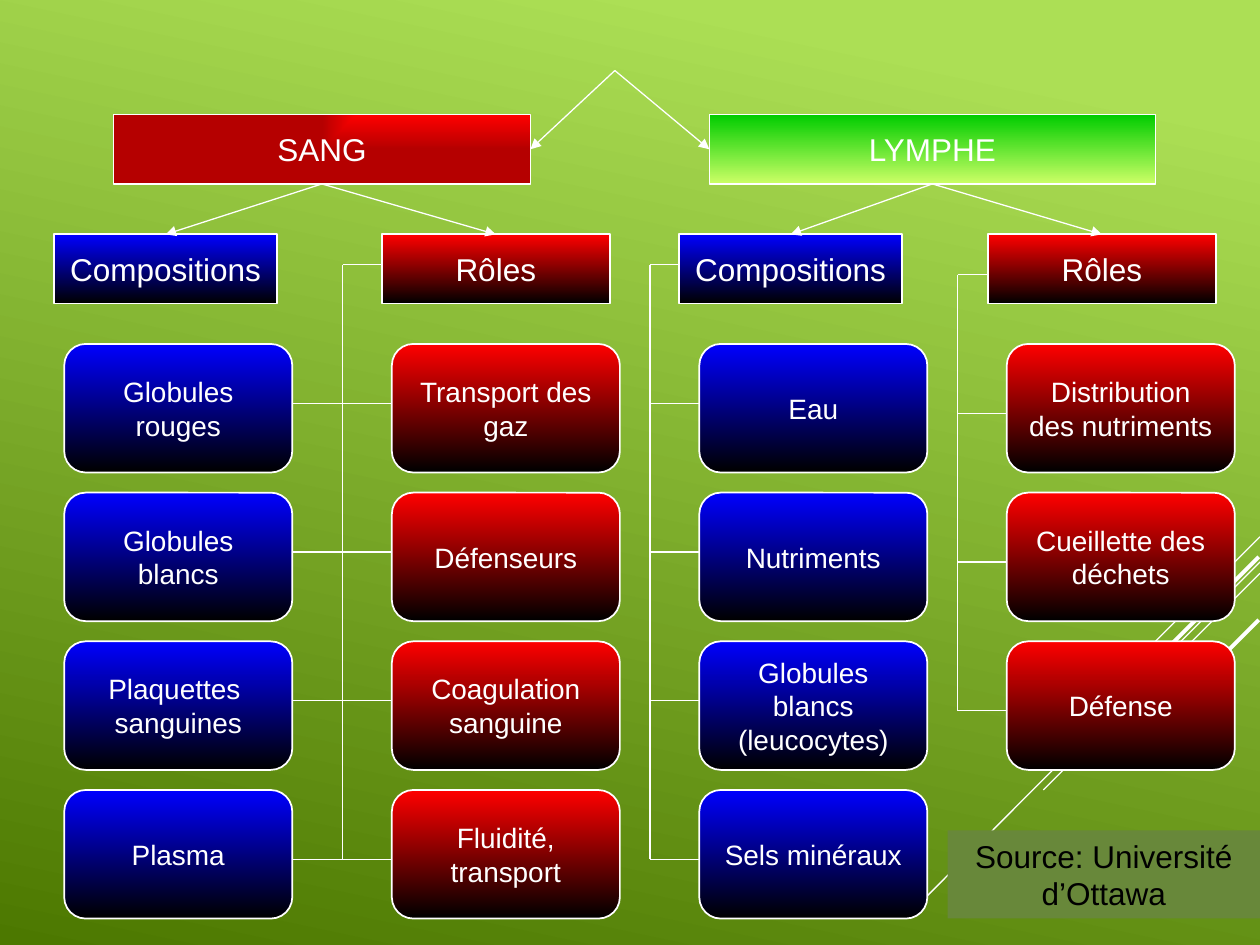
from dataclasses import dataclass

import pptx
import pptx.dml.color
import pptx.enum.shapes
import pptx.enum.text
import pptx.oxml
import pptx.oxml.ns
import pptx.util
from pptx.util import Inches

WHITE, BLACK, BLUE, RED = "FFFFFF", "000000", "0000FF", "FF0000"
SHAPES = pptx.enum.shapes.MSO_SHAPE
ANCHORS = pptx.enum.text.MSO_ANCHOR
TITLE_TOP, HEADER_TOP, LABEL_HEIGHT = 0.91, 1.86, 0.55
CARD_TOP, CARD_PITCH, CARD_WIDTH, CARD_HEIGHT = 2.73, 1.18, 1.81, 1.02


@dataclass
class Fluid:
    name: str
    left: float
    width: float
    colours: tuple[str, str]


@dataclass
class Column:
    header: str
    header_left: float
    header_width: float
    card_left: float
    colour: str
    cards: list[str]


@dataclass
class Bracket:
    """A vertical trunk with one branch to the header and one to each card."""
    trunk_x: float
    branch_left: float
    branch_right: float
    header_left: float
    header_y: float
    card_ys: list[float]


@dataclass
class Stripe:
    start: tuple[float, float]
    end: tuple[float, float]
    weight: float = 0.75


FLUIDS = [
    Fluid("SANG", 0.9, 3.31, (RED, "B50000")),
    Fluid("LYMPHE", 5.63, 3.54, ("00CC00", "CCFF66")),
]
COLUMNS = [
    Column("Compositions", 0.43, 1.77, 0.51, BLUE,
           ["Globules rouges", "Globules blancs", "Plaquettes \nsanguines", "Plasma"]),
    Column("Rôles", 3.03, 1.81, 3.11, RED,
           ["Transport des gaz", "Défenseurs", "Coagulation sanguine", "Fluidité, transport"]),
    Column("Compositions", 5.39, 1.77, 5.55, BLUE,
           ["Eau", "Nutriments", "Globules blancs (leucocytes)", "Sels minéraux"]),
    Column("Rôles", 7.84, 1.81, 7.99, RED,
           ["Distribution des nutriments", "Cueillette des déchets", "Défense"]),
]
BRACKETS = [
    Bracket(2.72, 2.32, 3.11, 3.03, 2.1, [3.2, 4.38, 5.56, 6.82]),
    Bracket(5.16, 5.16, 5.55, 5.39, 2.1, [3.2, 4.38, 5.56, 6.82]),
    Bracket(7.6, 7.6, 7.99, 7.84, 2.18, [3.28, 4.46, 5.64]),
]
STRIPES = [
    Stripe((10, 4.26), (9.17, 5.09)),
    Stripe((10, 4.46), (7.3, 7.17)),
    Stripe((10, 4.55), (8.28, 6.27)),
    Stripe((9.99, 4.42), (8.42, 5.99), 2.25),
    Stripe((9.99, 4.92), (8.85, 6.06), 2.25),
]


def rgb(colour: str) -> pptx.dml.color.RGBColor:
    return pptx.dml.color.RGBColor.from_string(colour)


def fill_gradient(fill, colours: tuple[str, str], angle: float = 90) -> None:
    """Fill with two colours; the angle runs clockwise."""
    fill.gradient()
    fill.gradient_angle = 360 - angle
    for stop, colour in zip(fill.gradient_stops, colours):
        stop.color.rgb = rgb(colour)


def radiate_from_top_right(shape) -> None:
    """Turn the shape's linear gradient into one that spreads from a corner."""
    linear = shape.element.spPr.find(".//" + pptx.oxml.ns.qn("a:lin"))
    linear.getparent().replace(linear, pptx.oxml.parse_xml(
        f'<a:path {pptx.oxml.ns.nsdecls("a")} path="rect">'
        '<a:fillToRect l="100000" b="100000"/></a:path>'))


def add_box(slide, kind, left: float, top: float, width: float, height: float):
    box = slide.shapes.add_shape(
        kind, Inches(left), Inches(top), Inches(width), Inches(height))
    box.shadow.inherit = False
    return box


def write(box, text: str, size: float, colour: str = WHITE,
          wrap: bool = True, anchor=ANCHORS.MIDDLE) -> None:
    frame = box.text_frame
    frame.word_wrap = wrap
    frame.vertical_anchor = anchor
    for index, line in enumerate(text.split("\n")):
        paragraph = frame.add_paragraph() if index else frame.paragraphs[0]
        paragraph.alignment = pptx.enum.text.PP_ALIGN.CENTER
        run = paragraph.add_run()
        run.text = line
        run.font.name = "Arial"
        run.font.size = pptx.util.Pt(size)
        run.font.color.rgb = rgb(colour)


def add_label(slide, text: str, left: float, top: float, width: float,
              colours: tuple[str, str], weight: float):
    label = add_box(slide, SHAPES.RECTANGLE, left, top, width, LABEL_HEIGHT)
    fill_gradient(label.fill, colours)
    label.line.color.rgb = rgb(WHITE)
    label.line.width = pptx.util.Pt(weight)
    write(label, text, 18, wrap=False)
    return label


def add_card(slide, text: str, left: float, top: float, colour: str) -> None:
    card = add_box(slide, SHAPES.ROUNDED_RECTANGLE, left, top, CARD_WIDTH, CARD_HEIGHT)
    fill_gradient(card.fill, (colour, BLACK))
    card.line.color.rgb = rgb(WHITE)
    card.line.width = pptx.util.Pt(1)
    write(card, text, 16)


def add_line(slide, start: tuple[float, float], end: tuple[float, float],
             weight: float = 0.75):
    line = slide.shapes.add_connector(
        pptx.enum.shapes.MSO_CONNECTOR.STRAIGHT, *map(Inches, (*start, *end)))
    line.line.color.rgb = rgb(WHITE)
    line.line.width = pptx.util.Pt(weight)
    pptx.oxml.parse_xml  # keeps XML helpers in one namespace
    line.element.spPr.append(pptx.oxml.parse_xml(
        f'<a:effectLst {pptx.oxml.ns.nsdecls("a")}/>'))
    return line


def add_arrow(slide, start: tuple[float, float], target, side: int):
    """Draw an arrow that ends at the middle of one side of the target."""
    arrow = add_line(slide, start, start)
    arrow.end_connect(target, side)
    arrow.line._get_or_add_ln().append(pptx.oxml.parse_xml(
        f'<a:tailEnd {pptx.oxml.ns.nsdecls("a")} type="triangle"/>'))
    return arrow


def add_bracket(slide, bracket: Bracket) -> None:
    x, y = bracket.trunk_x, bracket.header_y
    add_line(slide, (x, y), (x, bracket.card_ys[-1]))
    add_line(slide, (x, y), (bracket.header_left, y))
    for card_y in bracket.card_ys:
        add_line(slide, (bracket.branch_left, card_y), (bracket.branch_right, card_y))


def main() -> None:
    deck = pptx.Presentation()
    deck.slide_width, deck.slide_height = Inches(10), Inches(7.5)
    slide = deck.slides.add_slide(deck.slide_layouts[6])
    background = slide.background.fill
    fill_gradient(background, ("ACDF55", "4C7800"), 102)
    background.gradient_stops[0].position = 0.1

    for stripe in STRIPES:
        add_line(slide, stripe.start, stripe.end, stripe.weight)

    blood, lymph = [add_label(slide, fluid.name, fluid.left, TITLE_TOP, fluid.width,
                              fluid.colours, 0.75) for fluid in FLUIDS]
    radiate_from_top_right(blood)

    headers = []
    for column in COLUMNS:
        headers.append(add_label(slide, column.header, column.header_left, HEADER_TOP,
                                 column.header_width, (column.colour, BLACK), 1))
        for row, text in enumerate(column.cards):
            add_card(slide, text, column.card_left, CARD_TOP + row * CARD_PITCH, column.colour)

    for bracket in BRACKETS:
        add_bracket(slide, bracket)

    apex = (4.88, 0.56)
    add_arrow(slide, apex, blood, 3)
    add_arrow(slide, apex, lymph, 1)
    for fluid, branches in ((blood, headers[:2]), (lymph, headers[2:])):
        for header in branches:
            add_arrow(slide, apex, header, 0).begin_connect(fluid, 2)

    source = add_box(slide, SHAPES.RECTANGLE, 7.52, 6.59, 2.48, 0.7)
    source.fill.solid()
    source.fill.fore_color.rgb = rgb("68883A")
    source.line.fill.background()
    write(source, "Source: Université d’Ottawa", 18, BLACK, anchor=ANCHORS.TOP)

    deck.save("out.pptx")


if __name__ == "__main__":
    main()
